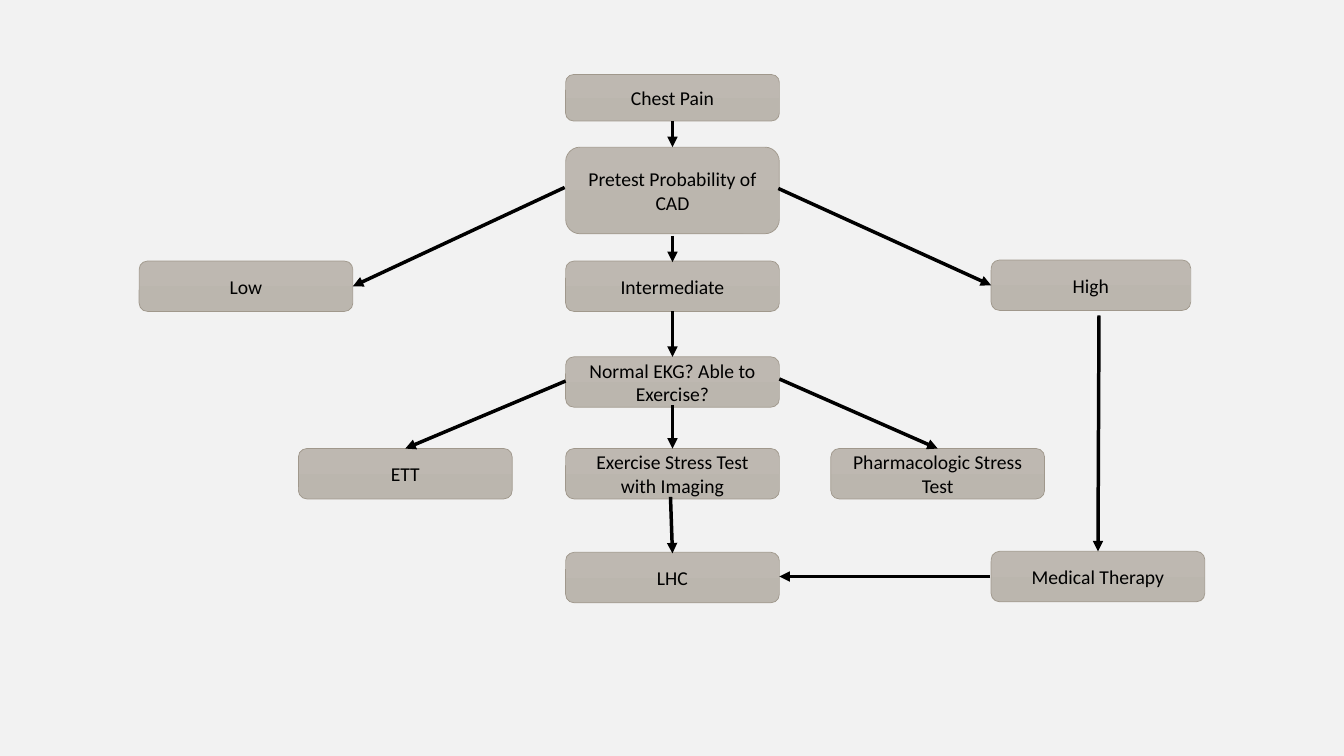
from lxml.etree import SubElement
from pptx import Presentation
from pptx.dml.color import RGBColor
from pptx.enum.shapes import MSO_CONNECTOR, MSO_SHAPE
from pptx.enum.text import MSO_ANCHOR, PP_ALIGN
from pptx.oxml.ns import qn
from pptx.util import Inches, Pt

BACKGROUND = RGBColor(0xF2, 0xF2, 0xF2)
BOX_TOP = RGBColor(0xBE, 0xB8, 0xB1)
BOX_BOTTOM = RGBColor(0xBB, 0xB6, 0xAE)
BOX_EDGE = RGBColor(0xA0, 0x98, 0x8C)
BLACK = RGBColor(0, 0, 0)

WIDTH, HEIGHT = 2.12, 0.5
CENTER_LEFT = 5.61
RIGHT_LEFT = 9.83
TEST_TOP = 4.45

# text, left, top, width, height
STEPS = [
    ("Chest Pain", CENTER_LEFT, 0.74, WIDTH, 0.46),
    ("Pretest Probability of CAD", CENTER_LEFT, 1.46, WIDTH, 0.86),
    ("Intermediate", CENTER_LEFT, 2.59, WIDTH, HEIGHT),
    ("Low", 1.38, 2.59, WIDTH, HEIGHT),
    ("High", RIGHT_LEFT, 2.58, 1.98, HEIGHT),
    ("Normal EKG? Able to Exercise?", CENTER_LEFT, 3.54, WIDTH, HEIGHT),
    ("Exercise Stress Test with Imaging", CENTER_LEFT, TEST_TOP, WIDTH, HEIGHT),
    ("Pharmacologic Stress Test", 8.24, TEST_TOP, WIDTH, HEIGHT),
    ("ETT", 2.96, TEST_TOP, WIDTH, HEIGHT),
    ("LHC", CENTER_LEFT, 5.48, WIDTH, HEIGHT),
    ("Medical Therapy", RIGHT_LEFT, 5.47, WIDTH, HEIGHT),
]

# start x, start y, end x, end y
ARROWS = [
    (6.67, 1.2, 6.67, 1.46),
    (6.67, 2.34, 6.67, 2.6),
    (6.67, 4.02, 6.67, TEST_TOP),
    (6.67, 3.09, 6.67, 3.54),
    (6.65, 4.93, 6.67, 5.49),
    (5.6, 1.86, 3.5, 2.84),
    (7.72, 1.87, 9.83, 2.83),
    (5.61, 3.78, 4.02, TEST_TOP),
    (7.73, 3.76, 9.3, TEST_TOP),
    (10.9, 3.13, 10.89, 5.47),
    (9.82, 5.72, 7.73, 5.72),
]

deck = Presentation()
deck.slide_width = Inches(13.33)
deck.slide_height = Inches(7.5)
page = deck.slides.add_slide(deck.slide_layouts[6])
page.background.fill.solid()
page.background.fill.fore_color.rgb = BACKGROUND

for text, *place in STEPS:
    box = page.shapes.add_shape(MSO_SHAPE.ROUNDED_RECTANGLE, *map(Inches, place))
    box.shadow.inherit = False
    box.fill.gradient()
    box.fill.gradient_angle = 270
    for stop, color, position in zip(box.fill.gradient_stops, (BOX_TOP, BOX_BOTTOM), (0, 1)):
        stop.color.rgb = color
        stop.position = position
    box.line.color.rgb = BOX_EDGE
    box.line.width = Pt(0.5)
    frame = box.text_frame
    frame.word_wrap = True
    frame.vertical_anchor = MSO_ANCHOR.MIDDLE
    para = frame.paragraphs[0]
    para.text = text
    para.alignment = PP_ALIGN.CENTER
    para.font.name = "Calibri"
    para.font.size = Pt(14)
    para.font.color.rgb = BLACK

for ends in ARROWS:
    arrow = page.shapes.add_connector(MSO_CONNECTOR.STRAIGHT, *map(Inches, ends))
    arrow.line.color.rgb = BLACK
    arrow.line.width = Pt(2.5)
    SubElement(arrow.line._get_or_add_ln(), qn("a:tailEnd"), type="triangle")
    SubElement(arrow._element.spPr, qn("a:effectLst"))

deck.save("out.pptx")
